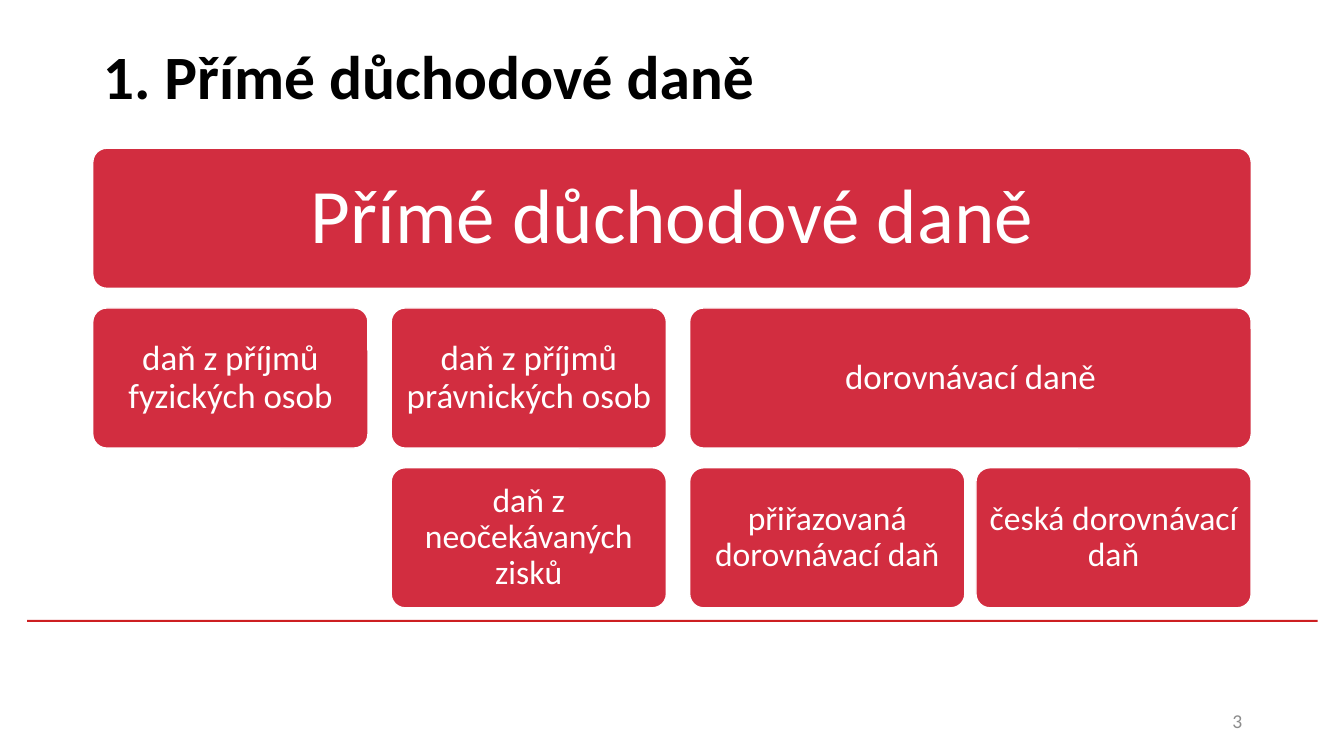
from pptx import Presentation
from pptx.dml.color import RGBColor
from pptx.enum.shapes import MSO_SHAPE as SHAPE
from pptx.enum.text import MSO_ANCHOR as ANCHOR, MSO_AUTO_SIZE as AUTO, PP_ALIGN as ALIGN
from pptx.util import Inches, Pt

COLORS = {"box": "D22D40", "rule": "CD1F21", "white": "FFFFFF", "black": "000000", "gray": "8C8C8C"}
FONT = "Calibri"
BOX_W, BOX_H = 2.73, 1.39
COL_STEP, ROW_STEP, PAIR_STEP = 2.96, 1.585, 2.84


def rgb(name):
    """Return the named colour."""
    return RGBColor.from_string(COLORS[name])


def write(tf, text, size, color, align, bold=False):
    """Write one formatted, vertically centred paragraph."""
    tf.word_wrap = True
    tf.auto_size = AUTO.NONE
    tf.vertical_anchor = ANCHOR.MIDDLE
    p = tf.paragraphs[0]
    p.alignment = align
    r = p.add_run()
    r.text = text
    r.font.name, r.font.size, r.font.bold = FONT, Pt(size), bold
    r.font.color.rgb = rgb(color)
    return p


def add_title(s, x, y, w, h):
    """Fill the title placeholder."""
    sp = s.shapes.title
    sp.left, sp.top, sp.width, sp.height = map(Inches, (x, y, w, h))
    write(sp.text_frame, "1. Přímé důchodové daně", 44, "black", ALIGN.LEFT, True)


def add_box(s, x, y, w, text, size):
    """Draw one rounded box of the tax tree."""
    sp = s.shapes.add_shape(SHAPE.ROUNDED_RECTANGLE, *map(Inches, (x, y, w, BOX_H)))
    sp.adjustments[0] = 0.1
    sp.shadow.inherit = False
    sp.fill.solid()
    sp.fill.fore_color.rgb = rgb("box")
    sp.line.color.rgb = rgb("white")
    sp.line.width = Pt(1)
    tf = sp.text_frame
    tf.margin_left = tf.margin_right = tf.margin_top = tf.margin_bottom = Inches(0.09)
    write(tf, text, size, "white", ALIGN.CENTER).line_spacing = 0.9


def add_tree(s, x, y):
    """Place the three rows of the tax tree."""
    cols = [x + i * COL_STEP for i in range(3)]
    rows = [y + i * ROW_STEP for i in range(3)]
    pair_x = cols[2] + PAIR_STEP
    pair_w = PAIR_STEP + BOX_W
    add_box(s, x, rows[0], pair_x + BOX_W - x, "Přímé důchodové daně", 55)
    add_box(s, cols[0], rows[1], BOX_W, "daň z příjmů fyzických osob", 25)
    add_box(s, cols[1], rows[1], BOX_W, "daň z příjmů právnických osob", 25)
    add_box(s, cols[2], rows[1], pair_w, "dorovnávací daně", 25)
    add_box(s, cols[1], rows[2], BOX_W, "daň z neočekávaných zisků", 24)
    add_box(s, cols[2], rows[2], BOX_W, "přiřazovaná dorovnávací daň", 24)
    add_box(s, pair_x, rows[2], BOX_W, "česká dorovnávací daň", 24)


def add_rule(s, x, y, w, h):
    """Draw the thin red rule."""
    sp = s.shapes.add_shape(SHAPE.RECTANGLE, *map(Inches, (x, y, w, h)))
    sp.shadow.inherit = False
    sp.fill.solid()
    sp.fill.fore_color.rgb = rgb("rule")
    sp.line.fill.background()


def add_number(s, x, y, w, h):
    """Add the slide number."""
    sp = s.shapes.add_textbox(*map(Inches, (x, y, w, h)))
    write(sp.text_frame, "3", 14, "gray", ALIGN.RIGHT)


def main():
    """Build and save the slide."""
    prs = Presentation()
    prs.slide_width, prs.slide_height = Inches(13.33), Inches(7.5)
    s = prs.slides.add_slide(prs.slide_layouts[5])
    add_rule(s, 0.27, 6.15, 12.8, 0.02)
    add_title(s, 0.92, 0.02, 11.5, 1.45)
    add_number(s, 9.42, 6.95, 3, 0.4)
    add_tree(s, 0.92, 1.47)
    prs.save("out.pptx")


if __name__ == "__main__":
    main()
